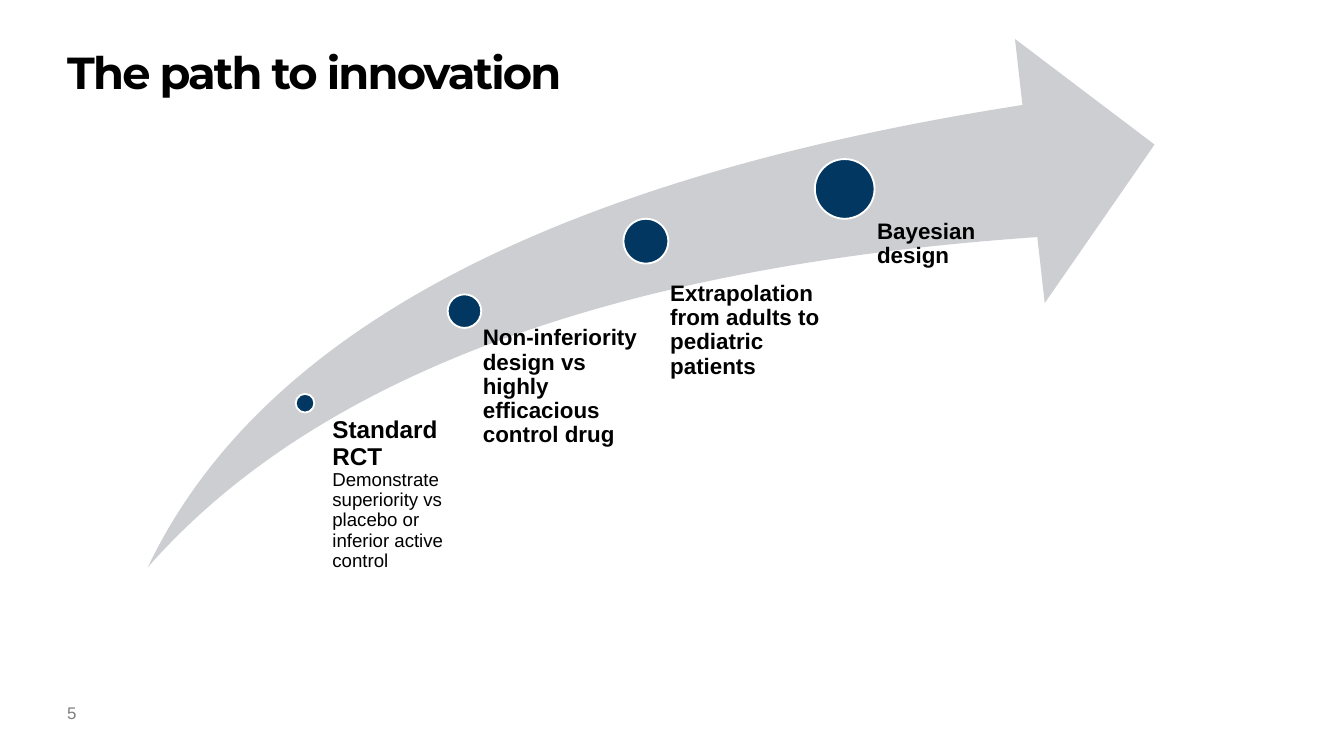
from collections import namedtuple

from pptx import Presentation
from pptx.dml.color import RGBColor
from pptx.enum import shapes, text
from pptx.util import Pt

BLACK = RGBColor(0x00, 0x00, 0x00)
WHITE = RGBColor(0xFF, 0xFF, 0xFF)
GREY = RGBColor(0x7F, 0x7F, 0x7F)
SILVER = RGBColor(0xCC, 0xCE, 0xD2)
NAVY = RGBColor(0x02, 0x37, 0x61)

Box = namedtuple("Box", "left top width height")
# Centres and label boxes are in points, relative to the box of the arrow.
Milestone = namedtuple("Milestone", "x y diameter label runs")

MILESTONES = [
    Milestone(84.2, 195.1, 10, Box(93.6, 203, 78, 67.7), [
        ("Standard RCT ", 13, True),
        ("Demonstrate superiority vs placebo or inferior active control", 10, False)]),
    Milestone(169.6, 145.8, 18, Box(169.9, 154.1, 95, 129.6), [
        ("Non-inferiority design vs highly efficacious control drug", 12, True)]),
    Milestone(266.8, 108.3, 24, Box(267.1, 130.3, 95, 131.8), [
        ("Extrapolation from adults to pediatric patients", 12, True)]),
    Milestone(373.3, 80.3, 32, Box(373.7, 97.2, 95, 149), [
        ("Bayesian design", 12, True)]),
]


def place(shape, box):
    shape.left, shape.top, shape.width, shape.height = (Pt(length) for length in box)


def prepare_frame(frame, inset=0):
    """Make the frame wrap from its top left corner, with only a left inset."""
    frame.word_wrap = True
    frame.auto_size = text.MSO_AUTO_SIZE.NONE
    frame.vertical_anchor = text.MSO_ANCHOR.TOP
    frame.margin_left = Pt(inset)
    frame.margin_top = frame.margin_right = frame.margin_bottom = 0


def format_run(run, size, color, bold=False, name="Arial"):
    run.font.name = name
    run.font.size = Pt(size)
    run.font.bold = bold
    run.font.color.rgb = color


def add_filled_shape(slide, kind, box, fill):
    shape = slide.shapes.add_shape(kind, *(Pt(length) for length in box))
    shape.shadow.inherit = False
    shape.fill.solid()
    shape.fill.fore_color.rgb = fill
    return shape


def set_title(slide, box, wording):
    title = slide.shapes.title
    place(title, box)
    prepare_frame(title.text_frame)
    title.text_frame.text = wording
    paragraph = title.text_frame.paragraphs[0]
    paragraph.alignment = text.PP_ALIGN.LEFT
    paragraph.line_spacing = 0.9
    run = paragraph.runs[0]
    format_run(run, 24, BLACK, True, "Montserrat")
    run.font._element.set("spc", "-100")


def add_page_number(slide, box, number):
    frame = slide.shapes.add_textbox(*(Pt(length) for length in box)).text_frame
    prepare_frame(frame)
    frame.text = str(number)
    format_run(frame.paragraphs[0].runs[0], 9, GREY)


def add_milestone(slide, box, milestone):
    diameter = milestone.diameter
    dot_box = Box(box.left + milestone.x - diameter / 2,
                  box.top + milestone.y - diameter / 2, diameter, diameter)
    dot = add_filled_shape(slide, shapes.MSO_SHAPE.OVAL, dot_box, NAVY)
    dot.line.color.rgb = WHITE
    dot.line.width = Pt(1)

    label = milestone.label
    label_box = Box(box.left + label.left, box.top + label.top, label.width, label.height)
    frame = slide.shapes.add_textbox(*(Pt(length) for length in label_box)).text_frame
    prepare_frame(frame, inset=0.53 * diameter)
    paragraph = frame.paragraphs[0]
    paragraph.line_spacing = 0.9
    for wording, size, bold in milestone.runs:
        run = paragraph.add_run()
        run.text = wording
        format_run(run, size, BLACK, bold)


def add_path(slide, box, milestones):
    """Draw the rising arrow with its milestones along it."""
    arrow = add_filled_shape(slide, shapes.MSO_SHAPE.SWOOSH_ARROW, box, SILVER)
    arrow.adjustments[0] = 0.25
    arrow.adjustments[1] = 0.25
    arrow.line.fill.background()
    for milestone in milestones:
        add_milestone(slide, box, milestone)


def main():
    presentation = Presentation()
    presentation.slide_width = Pt(720)
    presentation.slide_height = Pt(405)
    slide = presentation.slides.add_slide(presentation.slide_layouts[5])
    set_title(slide, Box(36, 27.4, 648, 75.6), "The path to innovation")
    add_page_number(slide, Box(36, 376.6, 18, 18), 5)
    add_path(slide, Box(79.2, 20.9, 539.3, 283), MILESTONES)
    presentation.save("out.pptx")


if __name__ == "__main__":
    main()
